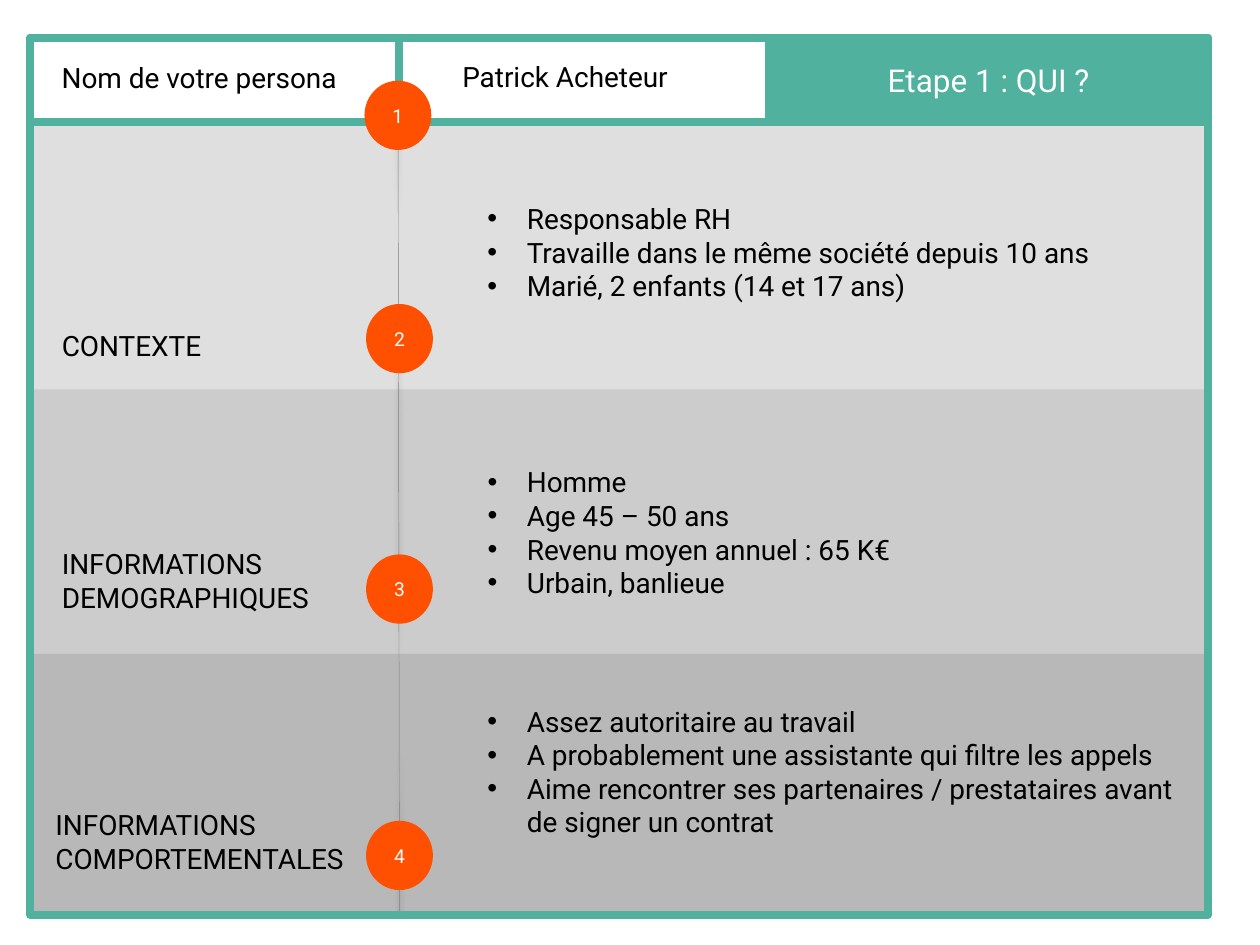
from dataclasses import dataclass
from typing import Optional

from lxml import etree
from pptx import Presentation
from pptx.dml.color import RGBColor
from pptx.enum.shapes import MSO_CONNECTOR, MSO_SHAPE
from pptx.enum.text import MSO_ANCHOR, MSO_AUTO_SIZE, PP_ALIGN
from pptx.oxml.ns import qn
from pptx.util import Pt

RECTANGLE = MSO_SHAPE.RECTANGLE
OVAL = MSO_SHAPE.OVAL
STRAIGHT = MSO_CONNECTOR.STRAIGHT
TOP, MIDDLE = MSO_ANCHOR.TOP, MSO_ANCHOR.MIDDLE
LEFT, CENTER = PP_ALIGN.LEFT, PP_ALIGN.CENTER
FIT_SHAPE = MSO_AUTO_SIZE.SHAPE_TO_FIT_TEXT

FONT = "Roboto"
BLACK = RGBColor(0x00, 0x00, 0x00)
WHITE = RGBColor(0xFF, 0xFF, 0xFF)
GREEN = RGBColor(0x50, 0xB1, 0x9E)
ORANGE = RGBColor(0xFF, 0x4F, 0x00)
GRAY = RGBColor(0x7F, 0x7F, 0x7F)
LIGHT_GRAY = RGBColor(0xDF, 0xDF, 0xDF)
MEDIUM_GRAY = RGBColor(0xCC, 0xCC, 0xCC)
DARK_GRAY = RGBColor(0xB8, 0xB8, 0xB8)

FRAME_LEFT, FRAME_TOP, FRAME_WIDTH, FRAME_HEIGHT = 17.3, 21.6, 673.2, 501.1
HEADER_HEIGHT = 48.2
NAME_WIDTH = 211
BANNER_LEFT = FRAME_LEFT + 2 * NAME_WIDTH
BANNER_WIDTH = FRAME_WIDTH - 2 * NAME_WIDTH
BORDER = 4.5
INSET = 3.6
INDENT = 22.5
BADGE_WIDTH, BADGE_HEIGHT = 38.2, 39.6
NUMBER_WIDTH, NUMBER_HEIGHT = 26.6, 22.3


@dataclass(frozen=True)
class Area:
    left: float
    top: float
    width: float
    height: float

    def lengths(self) -> tuple:
        return Pt(self.left), Pt(self.top), Pt(self.width), Pt(self.height)


@dataclass(frozen=True)
class Block:
    area: Area
    color: Optional[RGBColor] = None
    border: Optional[RGBColor] = None
    kind: int = RECTANGLE


@dataclass(frozen=True)
class Label:
    area: Area
    lines: tuple
    size: float = 16
    color: RGBColor = BLACK
    wrap: bool = False
    bullets: bool = False
    align: int = LEFT
    anchor: int = TOP


@dataclass(frozen=True)
class Badge:
    number: str
    left: float
    top: float


BANDS = (
    Block(Area(FRAME_LEFT, 71.3, FRAME_WIDTH, 154.8), LIGHT_GRAY),
    Block(Area(FRAME_LEFT, 222.5, FRAME_WIDTH, 157.7), MEDIUM_GRAY),
    Block(Area(FRAME_LEFT, 373.7, FRAME_WIDTH, 147.6), DARK_GRAY),
)
LABELS = (
    Label(Area(31.7, 184.3, 92.9, 29.5), ("CONTEXTE",)),
    Label(Area(31.7, 308.9, 176.4, 51.1), ("INFORMATIONS DEMOGRAPHIQUES",), wrap=True),
    Label(Area(28.1, 457.9, 199.4, 51.1), ("INFORMATIONS COMPORTEMENTALES",), wrap=True),
    Label(Area(260.6, 30.2, 126.7, 29.5), ("Patrick Acheteur",)),
    Label(
        Area(275, 111.6, 362.9, 73.4),
        (
            "Responsable RH",
            "Travaille dans le même société depuis 10 ans",
            "Marié, 2 enfants (14 et 17 ans)",
        ),
        bullets=True,
    ),
    Label(
        Area(275, 262.1, 251.3, 95),
        (
            "Homme",
            "Age 45 – 50 ans",
            "Revenu moyen annuel : 65 K€",
            "Urbain, banlieue",
        ),
        bullets=True,
    ),
    Label(
        Area(275, 398.9, 414.7, 95),
        (
            "Assez autoritaire au travail",
            "A probablement une assistante qui filtre les appels",
            "Aime rencontrer ses partenaires / prestataires avant de signer un contrat",
        ),
        wrap=True,
        bullets=True,
    ),
)
FRAMES = (
    Block(Area(FRAME_LEFT, FRAME_TOP, FRAME_WIDTH, FRAME_HEIGHT), border=GREEN),
    Block(Area(FRAME_LEFT, FRAME_TOP, NAME_WIDTH, HEADER_HEIGHT), border=GREEN),
)
BANNER = Block(Area(BANNER_LEFT, FRAME_TOP, BANNER_WIDTH, HEADER_HEIGHT), GREEN, GREEN)
BANNER_TITLE = Label(
    Area(BANNER_LEFT, 29.5, BANNER_WIDTH, 32.4),
    ("Etape 1 : QUI ?",), 18, WHITE, wrap=True, align=CENTER, anchor=MIDDLE,
)
PERSONA_FRAME = Block(
    Area(FRAME_LEFT + NAME_WIDTH, FRAME_TOP, NAME_WIDTH, HEADER_HEIGHT), border=GREEN
)
PERSONA_TITLE = Label(Area(31.7, 31, 172.8, 29.5), ("Nom de votre persona",))
BADGES = (
    Badge("1", 208.3, 46.1),
    Badge("2", 209.2, 173.7),
    Badge("3", 209.2, 316.8),
    Badge("4", 209.2, 469),
)


def draw_block(shapes, block: Block) -> None:
    shape = shapes.add_shape(block.kind, *block.area.lengths())
    shape.shadow.inherit = False
    if block.color is None:
        shape.fill.background()
    else:
        shape.fill.solid()
        shape.fill.fore_color.rgb = block.color
    if block.border is None:
        shape.line.fill.background()
    else:
        shape.line.color.rgb = block.border
        shape.line.width = Pt(BORDER)


def add_bullet(para) -> None:
    properties = para._p.get_or_add_pPr()
    properties.set("marL", str(Pt(INDENT)))
    properties.set("indent", str(-Pt(INDENT)))
    etree.SubElement(properties, qn("a:buFont"), typeface="Arial")
    etree.SubElement(properties, qn("a:buChar"), char="•")


def draw_label(shapes, label: Label) -> None:
    box = shapes.add_textbox(*label.area.lengths())
    frame = box.text_frame
    frame.margin_left = frame.margin_right = Pt(INSET)
    frame.margin_top = frame.margin_bottom = Pt(INSET)
    frame.word_wrap = label.wrap
    frame.auto_size = FIT_SHAPE
    frame.vertical_anchor = label.anchor
    frame.text = "\n".join(label.lines)
    for para in frame.paragraphs:
        if label.bullets:
            add_bullet(para)
        para.alignment = label.align
        para.font.name = FONT
        para.font.size = Pt(label.size)
        para.font.color.rgb = label.color


def draw_group(shapes, block: Block, label: Label) -> None:
    group = shapes.add_group_shape()
    draw_block(group.shapes, block)
    draw_label(group.shapes, label)


def draw_badge(shapes, badge: Badge) -> None:
    circle = Area(badge.left, badge.top, BADGE_WIDTH, BADGE_HEIGHT)
    number = Area(
        badge.left + (BADGE_WIDTH - NUMBER_WIDTH) / 2,
        badge.top + (BADGE_HEIGHT - NUMBER_HEIGHT) / 2,
        NUMBER_WIDTH, NUMBER_HEIGHT,
    )
    draw_group(
        shapes,
        Block(circle, ORANGE, kind=OVAL),
        Label(number, (badge.number,), 11, WHITE, wrap=True, align=CENTER, anchor=MIDDLE),
    )


def draw_divider(shapes) -> None:
    divider = shapes.add_connector(STRAIGHT, Pt(227.5), Pt(79.2), Pt(228.3), Pt(522.7))
    divider.line.color.rgb = GRAY
    divider.line.width = Pt(0.25)
    effects = etree.SubElement(divider._element.spPr, qn("a:effectLst"))
    shadow = etree.SubElement(
        effects, qn("a:outerShdw"), blurRad=str(Pt(3)), dist=str(Pt(1.6)), dir="5400000"
    )
    color = etree.SubElement(shadow, qn("a:srgbClr"), val=str(BLACK))
    etree.SubElement(color, qn("a:alpha"), val="38000")


def main() -> None:
    deck = Presentation()
    deck.slide_width, deck.slide_height = Pt(720), Pt(540)
    page = deck.slides.add_slide(deck.slide_layouts[6])
    shapes = page.shapes
    for band in BANDS:
        draw_block(shapes, band)
    draw_divider(shapes)
    for label in LABELS:
        draw_label(shapes, label)
    for frame in FRAMES:
        draw_block(shapes, frame)
    draw_group(shapes, BANNER, BANNER_TITLE)
    draw_block(shapes, PERSONA_FRAME)
    draw_label(shapes, PERSONA_TITLE)
    for badge in BADGES:
        draw_badge(shapes, badge)
    deck.save("out.pptx")


if __name__ == "__main__":
    main()
